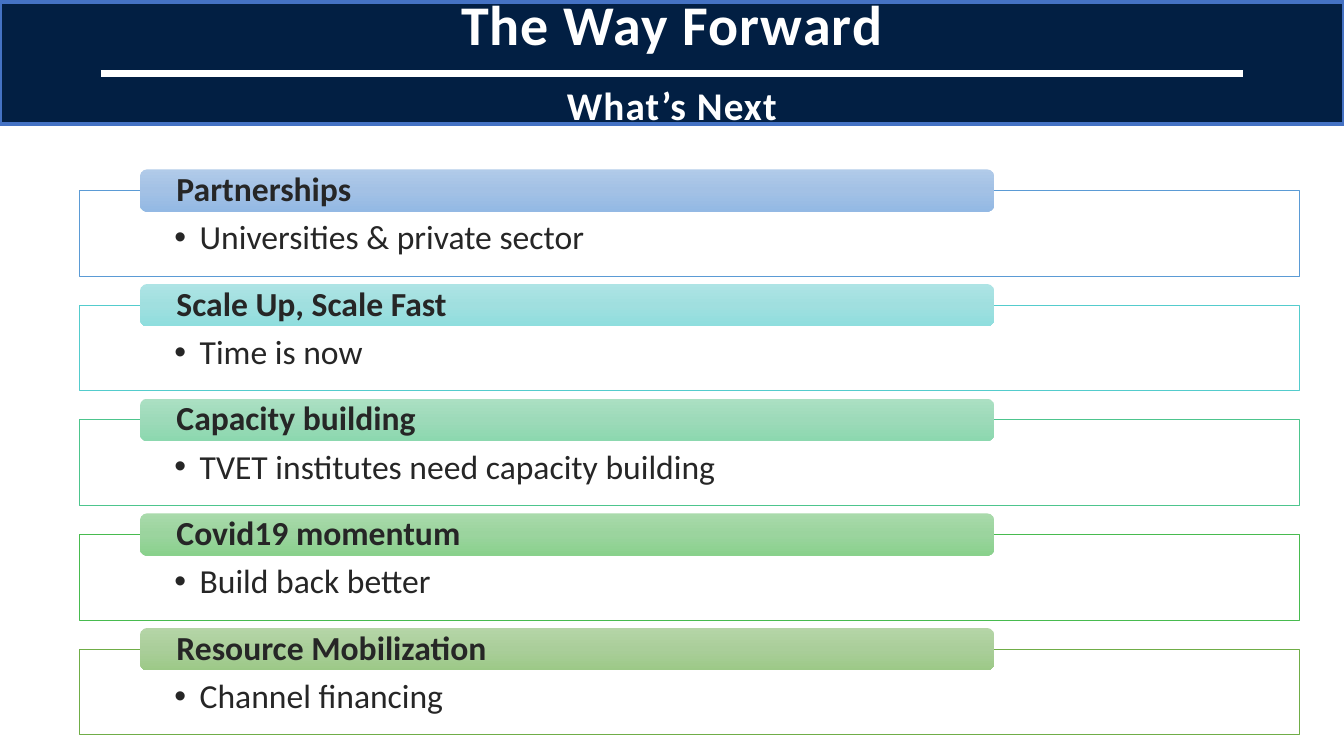
"""Build the slide on the way forward and what comes next."""
from lxml.etree import SubElement
from pptx import Presentation
from pptx.dml.color import RGBColor
from pptx.enum.shapes import MSO_CONNECTOR, MSO_SHAPE
from pptx.enum.text import MSO_ANCHOR, PP_ALIGN
from pptx.oxml.ns import qn
from pptx.util import Inches, Pt

HUES = {
    "white": "FFFFFF", "navy": "021F43", "edge": "4472C4", "ink": "262626",
    "blue": "5B9BD5", "blue top": "B1CBE9", "blue mid": "A3C1E5", "blue low": "93B9E4",
    "teal": "54CCCD", "teal top": "AEE4E5", "teal mid": "A0DFDF", "teal low": "8FDEDE",
    "mint": "4DC58D", "mint top": "ABE0C3", "mint mid": "9DDAB9", "mint low": "8CD8AF",
    "green": "48BB4F", "green top": "A9DAAB", "green mid": "9BD49E", "green low": "89D18C",
    "olive": "70AD47", "olive top": "B5D5A7", "olive mid": "AACE9A", "olive low": "9CC987",
}
TOPICS = [
    ("Partnerships", "Universities & private sector", "blue"),
    ("Scale Up, Scale Fast", "Time is now", "teal"),
    ("Capacity building", "TVET institutes need capacity building", "mint"),
    ("Covid19 momentum", "Build back better", "green"),
    ("Resource Mobilization", "Channel financing", "olive"),
]
FIRST, STEP = 1.68, 1.1375


class Deck:
    """Hold the font, the colours and the current slide."""

    def __init__(self, font, hues):
        self.font, self.hues = font, hues
        self.show = Presentation()
        self.show.slide_width, self.show.slide_height = Inches(13.33), Inches(7.5)
        self.slide = self.show.slides.add_slide(self.show.slide_layouts[6])

    def color(self, name):
        return RGBColor.from_string(self.hues[name])

    def shape(self, kind, place, pad, anchor):
        shape = self.slide.shapes.add_shape(kind, *map(Inches, place))
        shape.shadow.inherit = False
        frame = shape.text_frame
        frame.word_wrap = True
        frame.vertical_anchor = anchor
        (frame.margin_left, frame.margin_top,
         frame.margin_right, frame.margin_bottom) = map(Inches, pad)
        return shape

    def paint(self, shape, fill, line, width):
        shape.fill.solid()
        shape.fill.fore_color.rgb = self.color(fill)
        shape.line.color.rgb = self.color(line)
        shape.line.width = Pt(width)

    def style(self, para, size, color, bold=False, align=PP_ALIGN.LEFT, lead=0.9):
        para.alignment, para.line_spacing = align, lead
        for run in para.runs:
            font = run.font
            font.name, font.size, font.bold = self.font, Pt(size), bold
            font.color.rgb = self.color(color)

    def banner(self, title, sub):
        band = self.shape(MSO_SHAPE.RECTANGLE, (0, 0.02, 13.33, 1.21),
                          (0.07, 0.04, 0.07, 0.04), MSO_ANCHOR.MIDDLE)
        self.paint(band, "navy", "edge", 2.25)
        band.text_frame.text = f"{title}\n{sub}"
        for para, size, lead in zip(band.text_frame.paragraphs, (40, 28), (0.9, 1.5)):
            self.style(para, size, "white", True, PP_ALIGN.CENTER, lead)
            para.runs[0].font._element.set("spc", "80")

    def rule(self, left, right, top):
        line = self.slide.shapes.add_connector(
            MSO_CONNECTOR.STRAIGHT, *map(Inches, (left, top, right, top)))
        line.line.color.rgb = self.color("white")
        line.line.width = Pt(5)
        SubElement(line._element.spPr, qn("a:effectLst"))

    def box(self, top, text, hue):
        box = self.shape(MSO_SHAPE.RECTANGLE, (0.79, top, 12.1, 0.85),
                         (0.94, 0.3, 0.94, 0.19), MSO_ANCHOR.TOP)
        self.paint(box, "white", hue, 0.5)
        tone = box._element.spPr.find(qn("a:solidFill"))[0]
        SubElement(tone, qn("a:alpha"), val="90000")
        box.text_frame.text = text
        para = box.text_frame.paragraphs[0]
        self.style(para, 24, "ink")
        props = para._p.get_or_add_pPr()
        props.set("marL", str(Inches(0.25)))
        props.set("indent", str(-Inches(0.25)))
        SubElement(props, qn("a:buFont"), typeface="Arial")
        SubElement(props, qn("a:buChar"), char="•")

    def tab(self, top, text, hue):
        tab = self.shape(MSO_SHAPE.ROUNDED_RECTANGLE, (1.39, top, 8.47, 0.42),
                         (0.34, 0, 0.34, 0), MSO_ANCHOR.MIDDLE)
        tab.fill.gradient()
        tab.fill.gradient_angle = 270
        first, last = tab.fill.gradient_stops
        first.color.rgb = self.color(f"{hue} top")
        last.color.rgb = self.color(f"{hue} low")
        stops = tab._element.spPr.find(qn("a:gradFill")).find(qn("a:gsLst"))
        mid = SubElement(stops, qn("a:gs"), pos="50000")
        SubElement(mid, qn("a:srgbClr"), val=self.hues[f"{hue} mid"])
        stops.insert(1, mid)
        tab.line.fill.background()
        tab.text_frame.text = text
        self.style(tab.text_frame.paragraphs[0], 24, "ink", True)


def main():
    deck = Deck("Calibri", HUES)
    deck.banner("The Way Forward", "What’s Next")
    deck.rule(1, 12.33, 0.73)
    for row, (head, point, hue) in enumerate(TOPICS):
        top = FIRST + row * STEP
        deck.box(top + 0.21, point, hue)
        deck.tab(top, head, hue)
    deck.show.save("out.pptx")


if __name__ == "__main__":
    main()
